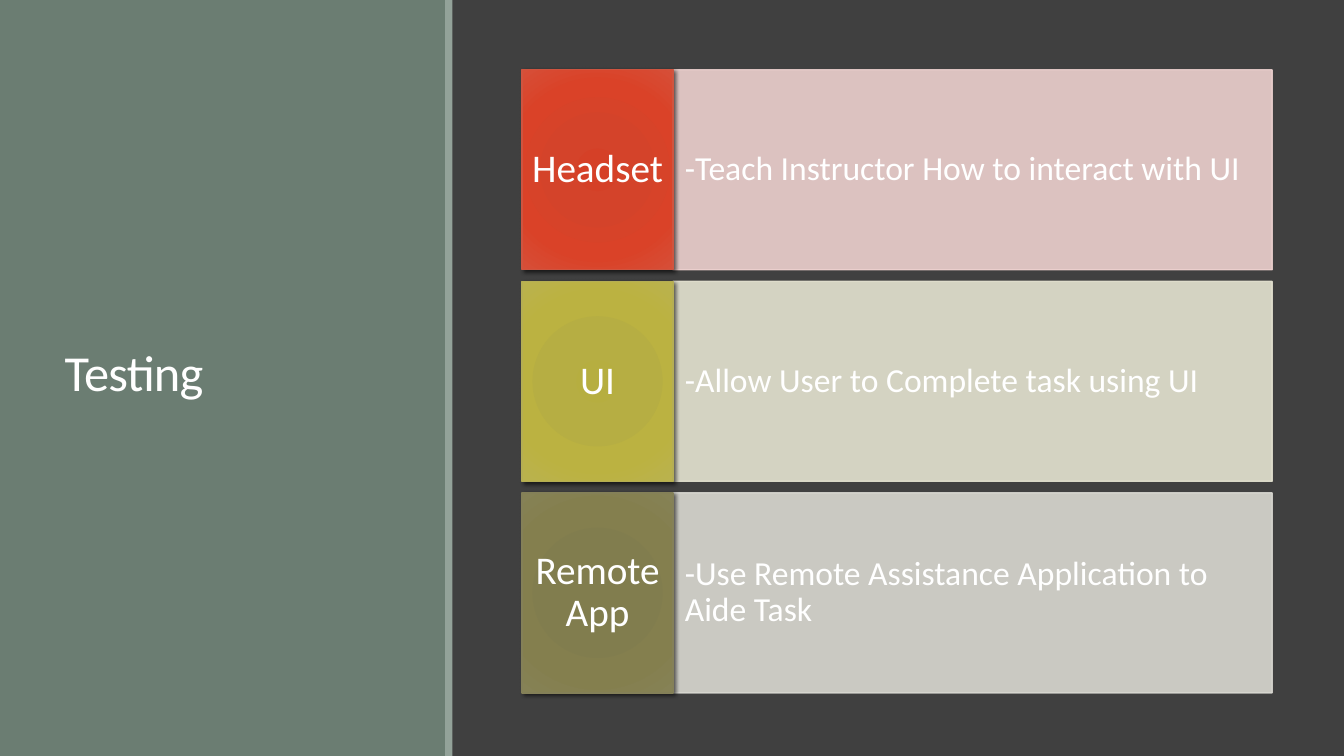
from lxml import etree
from pptx import Presentation
from pptx.dml.color import RGBColor
from pptx.enum.shapes import MSO_SHAPE as SHAPE
from pptx.enum.text import MSO_ANCHOR as ANCHOR, MSO_AUTO_SIZE as AUTO, PP_ALIGN as ALIGN
from pptx.oxml import parse_xml
from pptx.oxml.ns import nsdecls, qn
from pptx.util import Cm, Pt

WIDTH, HEIGHT = 33.87, 19.05
GREEN, SAGE, DARK, WHITE = "6B7D72", "93A299", "404040", "FFFFFF"
TOP, PITCH, ROW_HEIGHT = 1.76, 5.33, 5.04
LABEL_LEFT, LABEL_WIDTH = 13.16, 3.8
PANEL_LEFT, PANEL_WIDTH = 16.96, 15.1
GRADIENT_STOPS = (0, 34, 70, 100)
ROWS = [
    ("Headset", "-Teach Instructor How to interact with UI",
     ("D54027", "D4432A", "DA4228", "D64F38"), "CF543F", "EDD1CF"),
    ("UI", "-Allow User to Complete task using UI",
     ("B6AE40", "B6AE43", "BBB241", "BAB24E"), "B5AE53", "E5E3D1"),
    ("Remote App", "-Use Remote Assistance Application to Aide Task",
     ("817C4C", "817D4E", "847F4E", "868256"), "848058", "D9D8D1"),
]


def rgb(value):
    return RGBColor.from_string(value)


class Deck:
    """Holds the text style and the current slide, and draws its elements."""

    def __init__(self, prs, font, color):
        self.font, self.color = font, color
        self.s = prs.slides.add_slide(prs.slide_layouts[5])
        fill = self.s.background.fill
        fill.solid()
        fill.fore_color.rgb = rgb(DARK)

    def set_text(self, tf, text, size, align, spacing, insets):
        tf.word_wrap = True
        tf.auto_size = AUTO.NONE
        tf.vertical_anchor = ANCHOR.MIDDLE
        tf.margin_left = tf.margin_right = Cm(insets[0])
        tf.margin_top = tf.margin_bottom = Cm(insets[1])
        p = tf.paragraphs[0]
        p.text = text
        p.alignment = align
        p.line_spacing = spacing
        p.font.name, p.font.size = self.font, Pt(size)
        p.font.color.rgb = rgb(self.color)
        return p

    def title(self, text, x, y, w, h):
        sp = self.s.shapes.title
        sp.left, sp.top, sp.width, sp.height = Cm(x), Cm(y), Cm(w), Cm(h)
        p = self.set_text(sp.text_frame, text, 36, ALIGN.LEFT, 0.85, (0.25, 0.13))
        p.runs[0]._r.get_or_add_rPr().set("spc", "-50")
        self.s.shapes._spTree.append(sp._element)

    def rect(self, x, y, w, h, fill, line=None):
        sp = self.s.shapes.add_shape(SHAPE.RECTANGLE, Cm(x), Cm(y), Cm(w), Cm(h))
        sp.shadow.inherit = False
        sp.fill.solid()
        sp.fill.fore_color.rgb = rgb(fill)
        if line:
            sp.line.color.rgb = rgb(line)
            sp.line.width = Pt(1)
        else:
            sp.line.fill.background()
        return sp

    def panel(self, text, y, color):
        sp = self.rect(PANEL_LEFT, y, PANEL_WIDTH, ROW_HEIGHT, color, color)
        for clr in sp._element.spPr.iter(qn("a:srgbClr")):
            etree.SubElement(clr, qn("a:alpha"), val="90000")
        self.set_text(sp.text_frame, text, 24, ALIGN.LEFT, 0.9, (0.3, 1.27))

    def label(self, text, y, colors, line):
        sp = self.rect(LABEL_LEFT, y, LABEL_WIDTH, ROW_HEIGHT, colors[0], line)
        spPr = sp._element.spPr
        stops = "".join(f'<a:gs pos="{pos * 1000}"><a:srgbClr val="{color}"/></a:gs>'
                        for pos, color in zip(GRADIENT_STOPS, colors))
        spPr.replace(spPr.find(qn("a:solidFill")), parse_xml(
            f'<a:gradFill {nsdecls("a")} rotWithShape="1"><a:gsLst>{stops}</a:gsLst>'
            '<a:path path="circle"><a:fillToRect l="100000" t="100000" r="100000"'
            ' b="100000"/></a:path></a:gradFill>'))
        spPr.find(qn("a:effectLst")).append(parse_xml(
            f'<a:outerShdw {nsdecls("a")} blurRad="{Pt(3)}" dist="{Pt(2)}" dir="2700000"'
            ' algn="br" rotWithShape="0"><a:srgbClr val="000000"><a:alpha val="60000"/>'
            '</a:srgbClr></a:outerShdw>'))
        self.set_text(sp.text_frame, text, 28, ALIGN.CENTER, 0.9, (0.2, 0.5))


def main():
    prs = Presentation()
    prs.slide_width, prs.slide_height = Cm(WIDTH), Cm(HEIGHT)
    deck = Deck(prs, "Calibri", WHITE)
    deck.rect(0, 0, 11.25, HEIGHT, GREEN)
    deck.title("Testing", 1.38, 1.45, 8.56, 16.03)
    deck.rect(11.22, 0, 0.18, HEIGHT, SAGE)
    for i, (name, task, colors, line, tint) in enumerate(ROWS):
        y = TOP + i * PITCH
        deck.panel(task, y, tint)
        deck.label(name, y, colors, line)
    prs.save("out.pptx")


if __name__ == "__main__":
    main()
